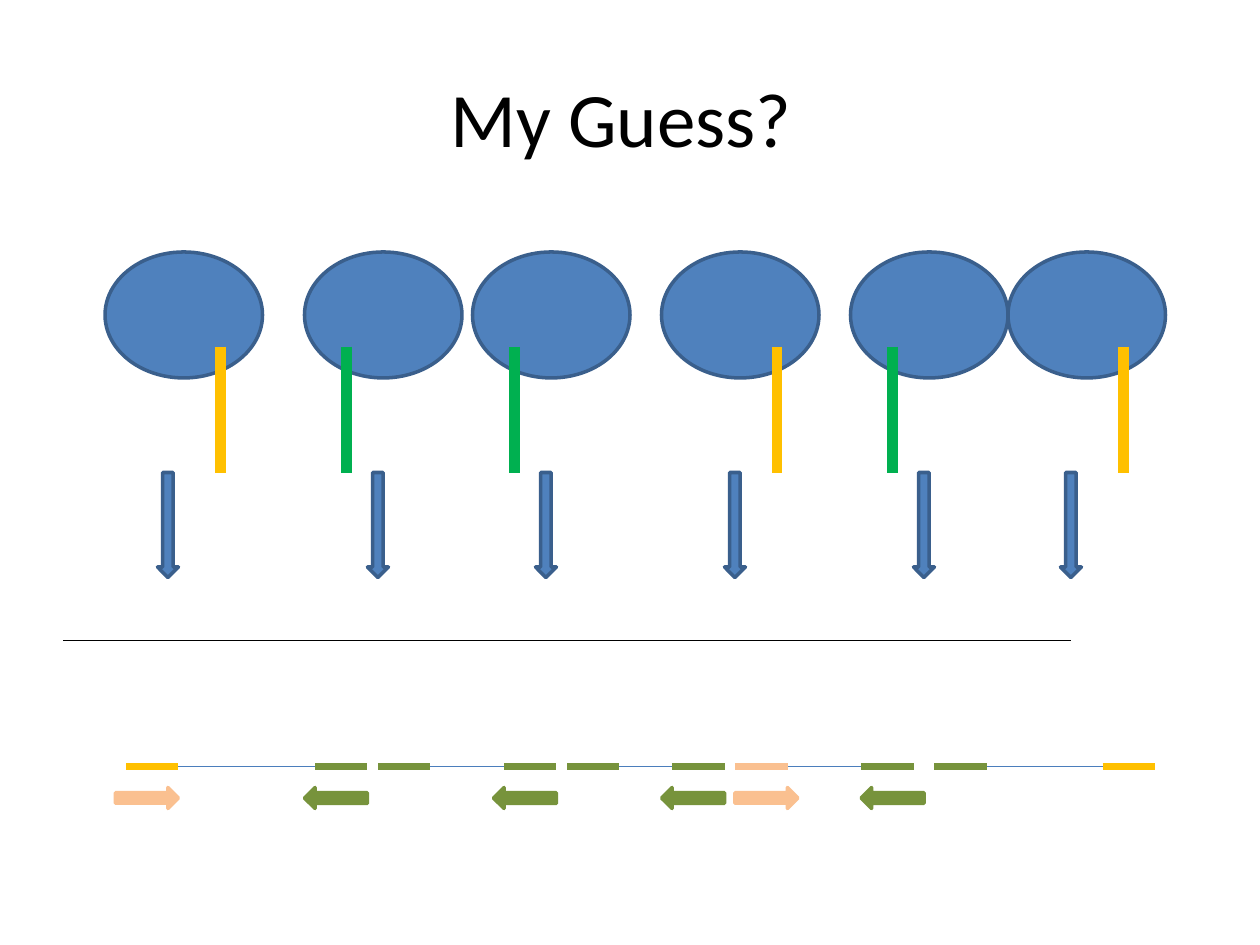
from dataclasses import dataclass

from lxml import etree
from pptx import Presentation
from pptx.dml.color import RGBColor
from pptx.enum import shapes, text
from pptx.oxml import ns
from pptx.util import Pt

WHITE = RGBColor(0xFF, 0xFF, 0xFF)
BLACK = RGBColor(0x00, 0x00, 0x00)
BLUE = RGBColor(0x4F, 0x81, 0xBD)
DARK_BLUE = RGBColor(0x3A, 0x5F, 0x8C)
LINK_BLUE = RGBColor(0x4B, 0x7E, 0xBC)
YELLOW = RGBColor(0xFF, 0xC0, 0x00)
GREEN = RGBColor(0x00, 0xB0, 0x50)
OLIVE = RGBColor(0x77, 0x93, 0x3C)
PEACH = RGBColor(0xFA, 0xC0, 0x90)

CELL_TOP, CELL_WIDTH, CELL_HEIGHT = 144, 90, 72
STEM_TOP, STEM_BOTTOM = 198, 270
DOWN_ARROW_HEIGHT = 60
DIVIDER_Y = 366
STRAND_Y = 438
BLOCK_WIDTH = 30
DIRECTION_TOP, DIRECTION_WIDTH = 450, 36
ARROW_THICKNESS = 12


@dataclass
class Cell:
    left: int
    stem: int
    stem_color: RGBColor
    arrow: int


@dataclass
class Mark:
    left: int
    color: RGBColor


CELLS = [
    Cell(60, 126, YELLOW, 90),
    Cell(174, 198, GREEN, 210),
    Cell(270, 294, GREEN, 306),
    Cell(378, 444, YELLOW, 414),
    Cell(486, 510, GREEN, 522),
    Cell(576, 642, YELLOW, 606),
]
LINKS = [(90, 192), (228, 306), (336, 402), (432, 516), (552, 630)]
BLOCKS = [
    Mark(72, YELLOW),
    *(Mark(left, OLIVE) for left in (180, 216, 288, 324, 384, 492, 534)),
    Mark(420, PEACH),
    Mark(630, YELLOW),
]
DIRECTIONS = [
    *(Mark(left, PEACH) for left in (66, 420)),
    *(Mark(left, OLIVE) for left in (174, 282, 378, 492)),
]


def add_line(page, start: tuple, end: tuple, color: RGBColor, width: float) -> None:
    line = page.shapes.add_connector(
        shapes.MSO_CONNECTOR.STRAIGHT, *(Pt(value) for value in (*start, *end))
    )
    line.line.color.rgb = color
    line.line.width = Pt(width)
    etree.SubElement(line._element.spPr, ns.qn("a:effectLst"))


def add_solid(page, kind, bounds: tuple, fill: RGBColor, outline: RGBColor):
    shape = page.shapes.add_shape(kind, *(Pt(value) for value in bounds))
    shape.shadow.inherit = False
    shape.fill.solid()
    shape.fill.fore_color.rgb = fill
    shape.line.color.rgb = outline
    shape.line.width = Pt(2)
    return shape


def add_title(page, wording: str) -> None:
    title = page.shapes.title
    title.left, title.top, title.width, title.height = Pt(36), Pt(21.6), Pt(648), Pt(90)
    frame = title.text_frame
    frame.text = wording
    frame.vertical_anchor = text.MSO_ANCHOR.MIDDLE
    para = frame.paragraphs[0]
    para.alignment = text.PP_ALIGN.CENTER
    font = para.runs[0].font
    font.name, font.size = "Calibri", Pt(44)
    font.color.rgb = BLACK


def add_cells(page) -> None:
    kinds = shapes.MSO_SHAPE
    for cell in CELLS:
        bounds = (cell.left, CELL_TOP, CELL_WIDTH, CELL_HEIGHT)
        add_solid(page, kinds.OVAL, bounds, BLUE, DARK_BLUE)
        add_line(page, (cell.stem, STEM_TOP), (cell.stem, STEM_BOTTOM), cell.stem_color, 6)
        bounds = (cell.arrow, STEM_BOTTOM, ARROW_THICKNESS, DOWN_ARROW_HEIGHT)
        add_solid(page, kinds.DOWN_ARROW, bounds, BLUE, DARK_BLUE)


def add_strand(page) -> None:
    for start, end in LINKS:
        add_line(page, (start, STRAND_Y), (end, STRAND_Y), LINK_BLUE, 0.75)
    for block in BLOCKS:
        end = block.left + BLOCK_WIDTH
        add_line(page, (block.left, STRAND_Y), (end, STRAND_Y), block.color, 4.5)
    for mark in DIRECTIONS:
        bounds = (mark.left, DIRECTION_TOP, DIRECTION_WIDTH, ARROW_THICKNESS)
        arrow = add_solid(page, shapes.MSO_SHAPE.RIGHT_ARROW, bounds, mark.color, mark.color)
        arrow.rotation = 180 if mark.color == OLIVE else 0


def main() -> None:
    deck = Presentation()
    deck.slide_width, deck.slide_height = Pt(720), Pt(540)
    page = deck.slides.add_slide(deck.slide_layouts[5])
    page.background.fill.solid()
    page.background.fill.fore_color.rgb = WHITE
    add_title(page, "My Guess? ")
    add_cells(page)
    add_line(page, (36, DIVIDER_Y), (612, DIVIDER_Y), BLACK, 0.75)
    add_strand(page)
    deck.save("out.pptx")


if __name__ == "__main__":
    main()
